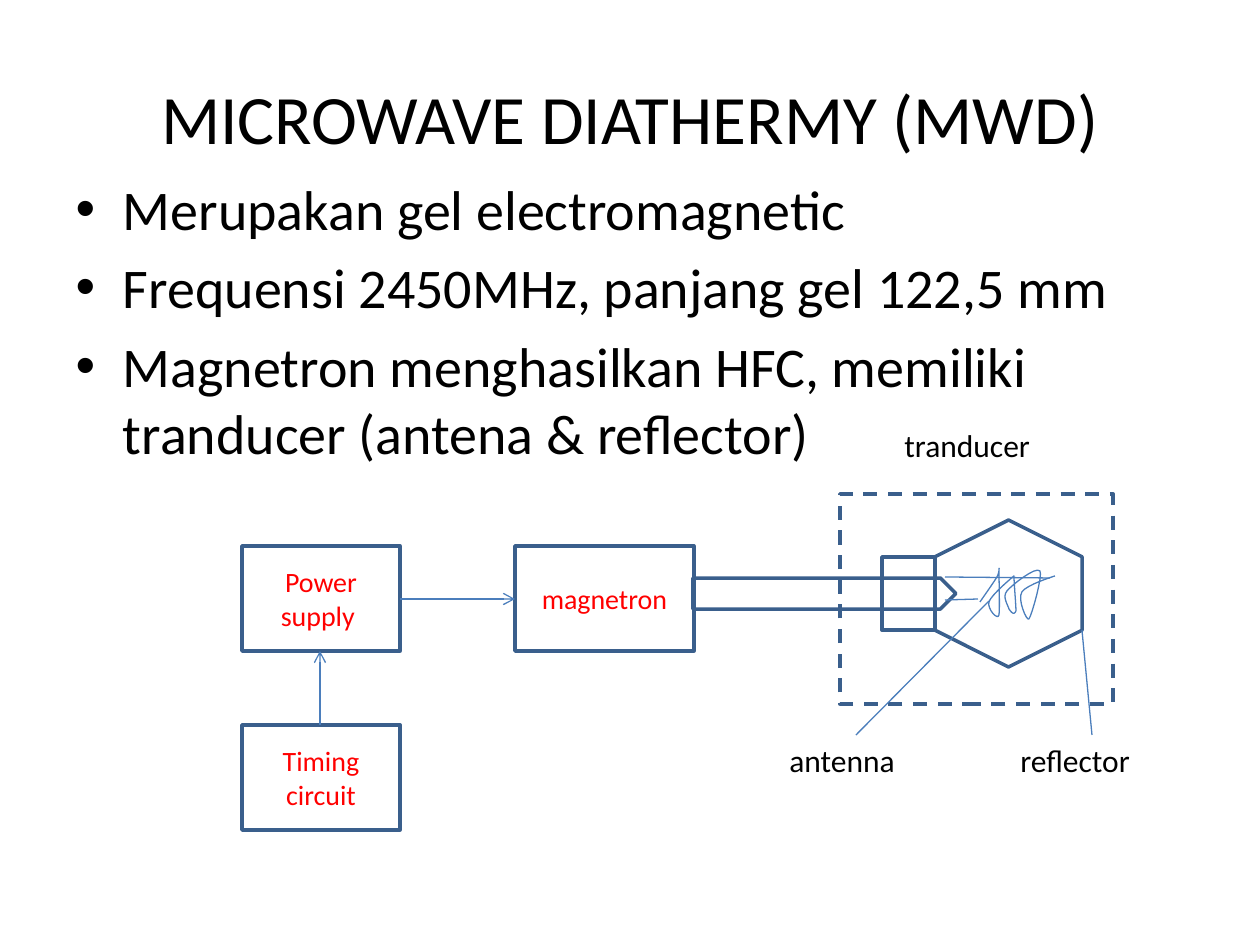
from lxml.etree import SubElement
from pptx import Presentation
from pptx.dml.color import RGBColor
from pptx.enum.dml import MSO_LINE
from pptx.enum.shapes import MSO_CONNECTOR, MSO_SHAPE
from pptx.enum.text import MSO_ANCHOR, MSO_AUTO_SIZE, PP_ALIGN
from pptx.oxml.ns import qn
from pptx.util import Pt

PX_PER_INCH = 126
FONT = "Calibri"
BLACK = RGBColor(0x00, 0x00, 0x00)
RED = RGBColor(0xFF, 0x00, 0x00)
OUTLINE = RGBColor(0x3A, 0x5F, 0x8C)
THIN_LINE = RGBColor(0x4B, 0x7E, 0xBC)

BULLETS = (
    "Merupakan gel electromagnetic",
    "Frequensi 2450MHz, panjang gel 122,5 mm",
    "Magnetron menghasilkan HFC, memiliki tranducer (antena & reflector)",
)

# Antenna scribble: a start point, then Bezier pieces (two controls, end)
ANTENNA_START = (980, 602)
ANTENNA_CURVES = (
    ((987, 592), (994, 582), (997, 577)),
    ((1000, 572), (999, 564), (999, 571)),
    ((999, 577), (1000, 610), (999, 615)),
    ((998, 621), (987, 609), (989, 602)),
    ((991, 595), (1014, 576), (1014, 576)),
    ((1014, 582), (1016, 605), (1016, 611)),
    ((1014, 616), (1011, 612), (1009, 609)),
    ((1008, 605), (1002, 597), (1007, 591)),
    ((1012, 585), (1036, 566), (1040, 571)),
    ((1043, 575), (1032, 615), (1029, 619)),
    ((1027, 622), (1017, 599), (1022, 592)),
    ((1026, 585), (1055, 576), (1055, 576)),
)


def px(length):
    return round(length * 914400 / PX_PER_INCH)


def place(shape, left, top, width, height):
    shape.left, shape.top = px(left), px(top)
    shape.width, shape.height = px(width), px(height)


def style_paragraph(paragraph, size, color=BLACK):
    paragraph.font.name = FONT
    paragraph.font.size = Pt(size)
    paragraph.font.color.rgb = color


def style_line(line, color, width):
    line.color.rgb = color
    line.width = Pt(width)


def fill_title(slide, text):
    title = slide.shapes.title
    place(title, 63, 38, 1134, 158)
    title.text_frame.text = text
    style_paragraph(title.text_frame.paragraphs[0], 39.6)


def fill_body(slide, lines):
    body = slide.placeholders[1]
    place(body, 63, 168, 1134, 624)
    frame = body.text_frame
    frame.text = "\n".join(lines)
    for paragraph in frame.paragraphs:
        style_paragraph(paragraph, 32)
    frame.paragraphs[0].space_before = Pt(0)


def add_outline(slide, kind, left, top, width, height):
    shape = slide.shapes.add_shape(kind, px(left), px(top), px(width), px(height))
    shape.shadow.inherit = False
    shape.fill.background()
    style_line(shape.line, OUTLINE, 2)
    return shape


def add_block(slide, text, left, top, width):
    shape = add_outline(slide, MSO_SHAPE.RECTANGLE, left, top, width, 105)
    frame = shape.text_frame
    frame.word_wrap = True
    frame.vertical_anchor = MSO_ANCHOR.MIDDLE
    frame.text = text
    frame.paragraphs[0].alignment = PP_ALIGN.CENTER
    style_paragraph(frame.paragraphs[0], 16, RED)


def add_label(slide, text, left, top, width):
    box = slide.shapes.add_textbox(px(left), px(top), px(width), px(64))
    frame = box.text_frame
    frame.word_wrap = False
    frame.auto_size = MSO_AUTO_SIZE.SHAPE_TO_FIT_TEXT
    frame.text = text
    style_paragraph(frame.paragraphs[0], 18)


def add_line(slide, start, end, arrow=False):
    connector = slide.shapes.add_connector(
        MSO_CONNECTOR.STRAIGHT, *(px(value) for value in start + end))
    style_line(connector.line, THIN_LINE, 0.75)
    if arrow:
        SubElement(connector.line._get_or_add_ln(), qn("a:tailEnd"), type="arrow")
    SubElement(connector._element.spPr, qn("a:effectLst"))


def curve_points(start, curves, steps=8):
    for first, second, end in curves:
        for step in range(1, steps + 1):
            t = step / steps
            weights = ((1 - t) ** 3, 3 * t * (1 - t) ** 2, 3 * t * t * (1 - t), t ** 3)
            corners = (start, first, second, end)
            yield tuple(px(sum(weight * corner[axis]
                               for weight, corner in zip(weights, corners)))
                        for axis in (0, 1))
        start = end


def add_antenna(slide):
    builder = slide.shapes.build_freeform(*(px(value) for value in ANTENNA_START))
    builder.add_line_segments(curve_points(ANTENNA_START, ANTENNA_CURVES), close=False)
    shape = builder.convert_to_shape()
    shape.shadow.inherit = False
    shape.fill.background()
    style_line(shape.line, THIN_LINE, 0.75)


def main():
    presentation = Presentation()
    presentation.slide_width = px(1260)
    presentation.slide_height = px(945)
    slide = presentation.slides.add_slide(presentation.slide_layouts[1])

    # Title and list
    fill_title(slide, "MICROWAVE DIATHERMY (MWD)")
    fill_body(slide, BULLETS)

    # Circuit blocks
    add_block(slide, "Timing circuit", 242, 725, 158)
    add_block(slide, "Power supply ", 242, 546, 158)
    add_block(slide, "magnetron", 515, 546, 179)

    # Transducer: dashed frame, socket, reflector and cable
    frame = add_outline(slide, MSO_SHAPE.RECTANGLE, 840, 494, 273, 210)
    frame.line.dash_style = MSO_LINE.DASH
    add_outline(slide, MSO_SHAPE.RECTANGLE, 882, 557, 53, 73)
    reflector = add_outline(slide, MSO_SHAPE.HEXAGON, 935, 520, 147, 147)
    reflector.rotation = 90
    add_outline(slide, MSO_SHAPE.PENTAGON, 693, 578, 263, 31)

    # Antenna and its leads
    add_antenna(slide)
    add_line(slide, (945, 600), (978, 599))
    add_line(slide, (945, 577), (1050, 578))

    # Labels and their pointers
    add_label(slide, "tranducer", 892, 420, 185)
    add_label(slide, "antenna", 777, 735, 158)
    add_label(slide, "reflector", 1008, 735, 169)
    add_line(slide, (989, 601), (856, 735))
    add_line(slide, (1082, 630), (1092, 735))

    # Signal flow
    add_line(slide, (320, 725), (320, 651), arrow=True)
    add_line(slide, (400, 599), (515, 599), arrow=True)

    presentation.save("out.pptx")


if __name__ == "__main__":
    main()
